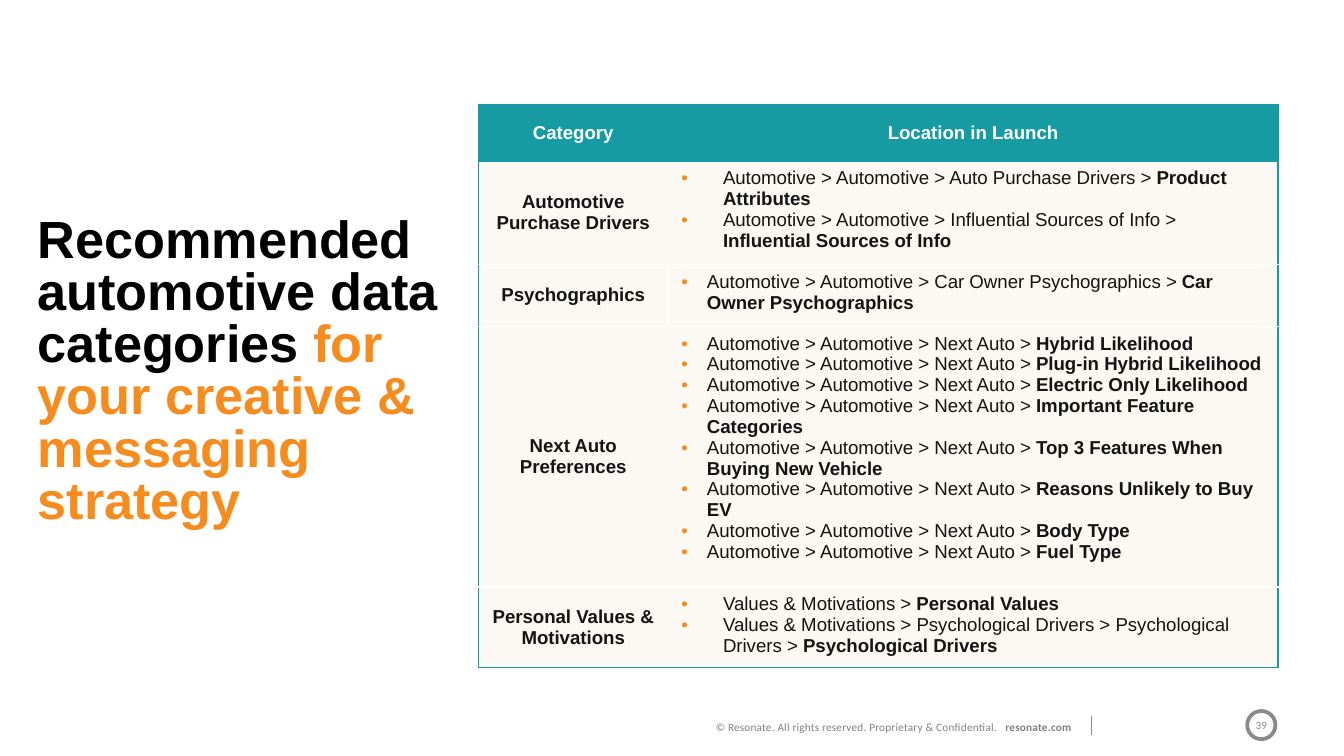
"""Build the slide of recommended automotive data categories."""
from dataclasses import dataclass

from lxml import etree
from pptx import Presentation
from pptx.dml.color import RGBColor
from pptx.enum import shapes, text
from pptx.oxml import ns
from pptx.util import Inches, Pt


@dataclass(frozen=True)
class Theme:
    teal: str = "119CA3"
    header: str = "179BA3"
    cream: str = "FCF8F3"
    white: str = "FFFFFF"
    black: str = "000000"
    ink: str = "141414"
    orange: str = "F68C1E"
    gray: str = "808080"
    ring: str = "8A8A8A"
    title_size: int = 28
    table_size: int = 10
    footer_size: int = 6


theme = Theme()


def write(para, words, color, size, bold=False, name="Arial"):
    span = para.add_run()
    span.text = words
    for key, value in {"size": Pt(size), "bold": bold, "name": name}.items():
        setattr(span.font, key, value)
    span.font.color.rgb = RGBColor.from_string(color)
    return span


def add_color(parent, tag, color):
    node = etree.SubElement(parent, ns.qn(tag))
    etree.SubElement(node, ns.qn("a:srgbClr"), val=color)


deck = Presentation()
deck.slide_width = Inches(10)
deck.slide_height = deck.slide_width * 9 // 16
page = deck.slides.add_slide(deck.slide_layouts[5])
page.background.fill.solid()
page.background.fill.fore_color.rgb = RGBColor.from_string(theme.white)

title = page.shapes.title
for key, value in {"left": 0.18, "top": 1.56, "width": 3.62, "height": 2.24}.items():
    setattr(title, key, Inches(value))
title_format = {
    "word_wrap": True,
    "auto_size": text.MSO_AUTO_SIZE.NONE,
    "vertical_anchor": text.MSO_ANCHOR.TOP,
}
for key, value in title_format.items():
    setattr(title.text_frame, key, value)
para = title.text_frame.paragraphs[0]
para.alignment = text.PP_ALIGN.LEFT
para.line_spacing = Pt(28)
write(para, "Recommended automotive data categories ", theme.black, theme.title_size, True)
write(para, "for your creative & messaging strategy", theme.orange, theme.title_size, True)

auto = "Automotive > Automotive > "
next_auto = auto + "Next Auto > "
values = "Values & Motivations > "
next_names = [
    "Hybrid Likelihood",
    "Plug-in Hybrid Likelihood",
    "Electric Only Likelihood",
    "Important Feature Categories",
    "Top 3 Features When Buying New Vehicle",
    "Reasons Unlikely to Buy EV",
    "Body Type",
    "Fuel Type",
]
categories = [
    ("Automotive Purchase Drivers", 0.31, [
        (auto + "Auto Purchase Drivers > ", "Product Attributes"),
        (auto + "Influential Sources of Info > ", "Influential Sources of Info"),
    ]),
    ("Psychographics", 0.19, [
        (auto + "Car Owner Psychographics > ", "Car Owner Psychographics"),
    ]),
    ("Next Auto Preferences", 0.19, [(next_auto, name) for name in next_names]),
    ("Personal Values & Motivations", 0.31, [
        (values, "Personal Values"),
        (values + "Psychological Drivers > Psychological Drivers > ", "Psychological Drivers"),
    ]),
]
widths = [1.41, 4.54]
heights = [0.42, 0.77, 0.46, 1.94, 0.6]
frame = page.shapes.add_table(
    len(heights), len(widths), Inches(3.56), Inches(0.78), Inches(sum(widths)), Inches(sum(heights))
)
table = frame.table
table.horz_banding = False
for column, width in zip(table.columns, widths):
    column.width = Inches(width)
for row, height in zip(table.rows, heights):
    row.height = Inches(height)

outer, inner = (theme.teal, 0.75), (theme.white, 1)
row_edges = [outer, outer, inner, inner, inner, outer]
for row in range(len(heights)):
    divider = inner if row == 2 else None
    column_edges = [outer, divider, outer]
    for column in range(len(widths)):
        cell = table.cell(row, column)
        borders = {
            "a:lnL": column_edges[column],
            "a:lnR": column_edges[column + 1],
            "a:lnT": row_edges[row],
            "a:lnB": row_edges[row + 1],
        }
        properties = cell._tc.get_or_add_tcPr()
        for tag, edge in borders.items():
            line = etree.SubElement(properties, ns.qn(tag))
            if edge:
                line.set("w", str(Pt(edge[1])))
                add_color(line, "a:solidFill", edge[0])
            else:
                etree.SubElement(line, ns.qn("a:noFill"))
        cell.fill.solid()
        cell.fill.fore_color.rgb = RGBColor.from_string(theme.cream if row else theme.header)
        if row == 0 or column == 0:
            cell.vertical_anchor = text.MSO_ANCHOR.MIDDLE
            para = cell.text_frame.paragraphs[0]
            para.alignment = text.PP_ALIGN.CENTER
            label = categories[row - 1][0] if row else ["Category", "Location in Launch"][column]
            write(para, label, theme.ink if row else theme.white, theme.table_size, True)
            continue
        indent, locations = categories[row - 1][1:]
        for index, (trail, name) in enumerate(locations):
            para = cell.text_frame.add_paragraph() if index else cell.text_frame.paragraphs[0]
            bullet = para._p.get_or_add_pPr()
            bullet.set("marL", str(Inches(indent)))
            bullet.set("indent", str(-Inches(indent)))
            add_color(bullet, "a:buClr", theme.orange)
            etree.SubElement(bullet, ns.qn("a:buFont"), typeface="Arial")
            etree.SubElement(bullet, ns.qn("a:buChar"), char="•")
            write(para, trail, theme.ink, theme.table_size)
            write(para, name, theme.ink, theme.table_size, True)

footer = page.shapes.add_textbox(Inches(-0.14), Inches(5.31), Inches(8.23), Inches(0.2))
footer.text_frame.word_wrap = True
para = footer.text_frame.paragraphs[0]
para.alignment = text.PP_ALIGN.RIGHT
notice = "© Resonate. All rights reserved. Proprietary & Confidential.   "
for words, bold in [(notice, False), ("resonate.com ", True)]:
    span = write(para, words, theme.gray, theme.footer_size, bold, "Calibri")
    span.font._element.set("spc", "10")

separator = page.shapes.add_connector(
    shapes.MSO_CONNECTOR.STRAIGHT, Inches(8.12), Inches(5.33), Inches(8.12), Inches(5.47)
)
separator.line.color.rgb = RGBColor.from_string(theme.ring)
separator.line.width = Pt(0.75)
etree.SubElement(separator._element.spPr, ns.qn("a:effectLst"))

badge = page.shapes.add_shape(
    shapes.MSO_SHAPE.OVAL, Inches(9.28), Inches(5.29), Inches(0.21), Inches(0.21)
)
badge.shadow.inherit = False
badge.fill.background()
badge.line.color.rgb = RGBColor.from_string(theme.ring)
badge.line.width = Pt(2)
badge_format = {
    "word_wrap": False,
    "vertical_anchor": text.MSO_ANCHOR.MIDDLE,
    "margin_left": 0,
    "margin_right": 0,
    "margin_top": 0,
    "margin_bottom": 0,
}
for key, value in badge_format.items():
    setattr(badge.text_frame, key, value)
para = badge.text_frame.paragraphs[0]
para.alignment = text.PP_ALIGN.CENTER
write(para, "39", theme.ring, theme.footer_size, name="Calibri")

deck.save("out.pptx")
